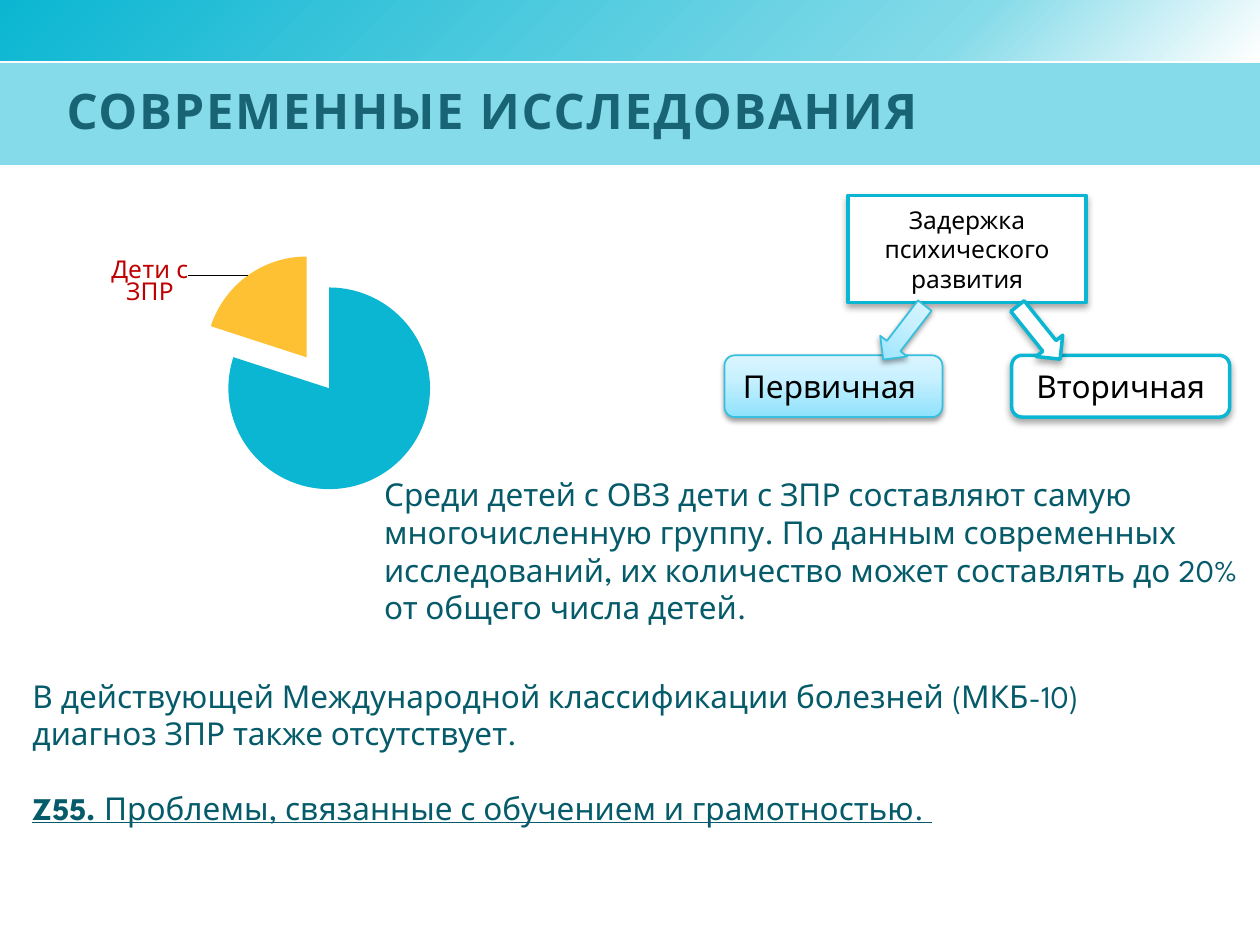
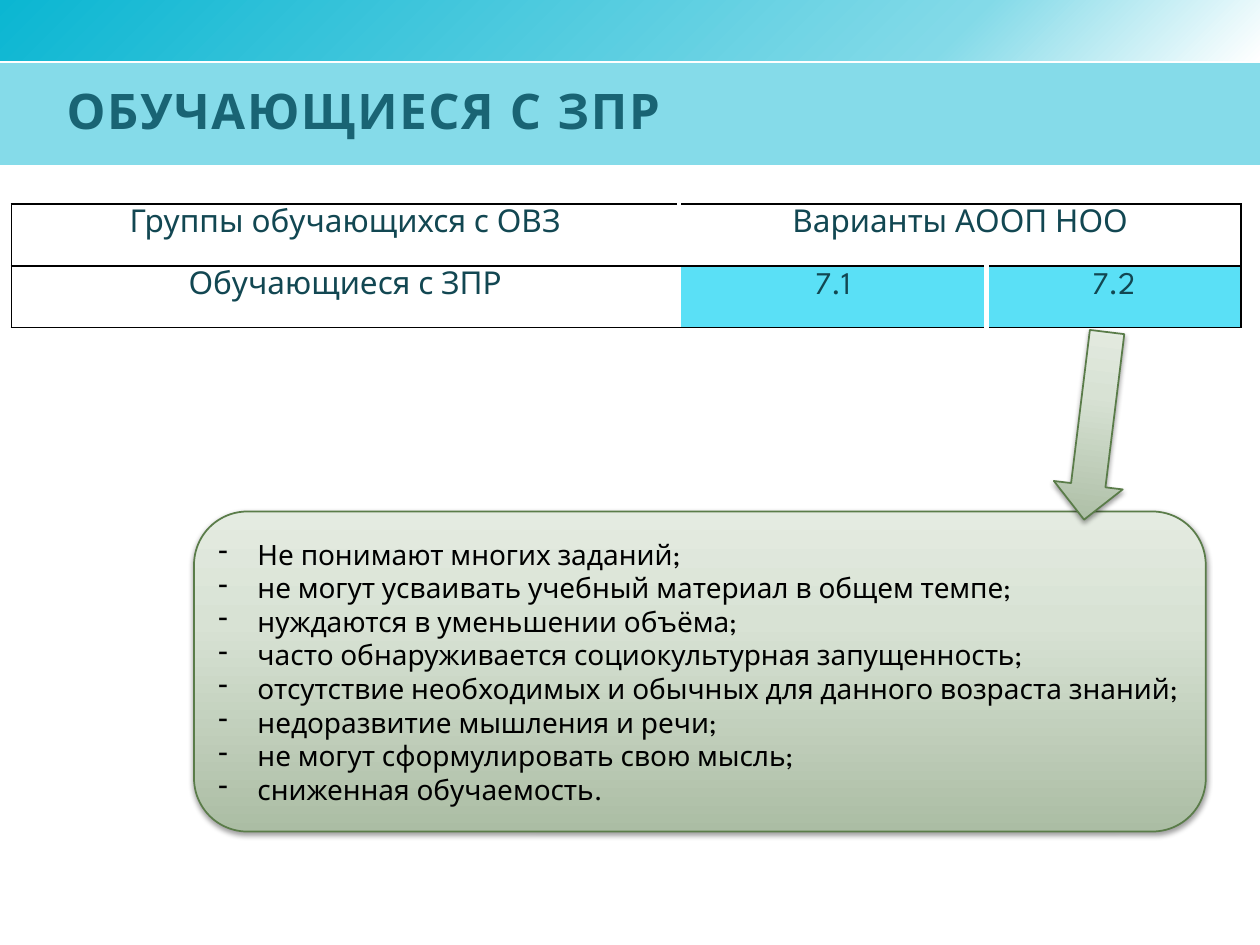
from dataclasses import dataclass
from typing import NamedTuple

from lxml.etree import SubElement
from pptx import Presentation
from pptx.chart.data import CategoryChartData
from pptx.dml.color import RGBColor
from pptx.enum.chart import XL_CHART_TYPE, XL_LABEL_POSITION
from pptx.enum.shapes import MSO_SHAPE
from pptx.enum.text import MSO_ANCHOR, MSO_AUTO_SIZE, PP_ALIGN
from pptx.oxml.ns import qn
from pptx.util import Emu, Pt

PX = 9144  # EMU per px, 100 px to the inch


@dataclass(frozen=True)
class Theme:
    font: str = "League Spartan"
    title: str = "196474"
    body: str = "055B69"
    table: str = "124752"
    black: str = "000000"
    white: str = "FFFFFF"
    accent: str = "0BB6D2"
    band: str = "85DBE9"
    yellow: str = "FEC133"
    label: str = "C00000"
    variant: str = "5AE0F6"
    title_pt: int = 28
    body_pt: int = 18
    list_pt: int = 16
    small_pt: int = 14


T = Theme()


class Box(NamedTuple):
    x: int
    y: int
    w: int
    h: int

    def emu(self) -> list[Emu]:
        return [Emu(v * PX) for v in self]


class Gradient(NamedTuple):
    stops: tuple[tuple[int, str], ...]
    angle: int


class Shadow(NamedTuple):
    alpha: int
    blur: float
    dist: float


class Look(NamedTuple):
    fill: str | Gradient
    line: str | None = None
    weight: float = 0
    shadow: Shadow | None = None


class Block(NamedTuple):
    box: Box
    look: Look
    kind: MSO_SHAPE
    text: str = ""
    size: int = T.body_pt
    rotation: float = 0


class Run(NamedTuple):
    text: str
    bold: bool = False
    underline: bool = False


STRIP = Look(Gradient(((0, T.accent), (75, "83DAE8"), (100, T.white)), 45))
BAND = Look(T.band)
OUTLINED = Look(T.white, T.accent, 2, Shadow(35, 4, 2))
SOFT = Shadow(38, 3.1, 1.6)
BLUE = Look(Gradient(((0, "8FE2FD"), (65, "CAF1FF"), (100, "DAF5FF")), 270), "36BFDE", 1, SOFT)
GREEN = Look(Gradient(((0, "ABBDA4"), (65, "D8E2D4"), (100, "E4EBE1")), 270), "5A7C49", 1, SOFT)


def rgb(color: str) -> RGBColor:
    return RGBColor.from_string(color)


def add(parent, tag: str, **attrs):
    return SubElement(parent, qn(tag), {k: str(v) for k, v in attrs.items()})


def add_run(p, text: str, size: int, color: str, bold: bool = False, underline: bool = False):
    r = p.add_run()
    r.text = text
    f = r.font
    f.name, f.size, f.bold, f.color.rgb = T.font, Pt(size), bold, rgb(color)
    if underline:
        f.underline = True
    return r


def set_gradient(sp, gradient: Gradient) -> None:
    sp.fill.solid()
    sp_pr = sp._element.spPr
    solid = sp_pr.find(qn("a:solidFill"))
    grad = add(sp_pr, "a:gradFill", rotWithShape=1)
    stops = add(grad, "a:gsLst")
    for pos, color in gradient.stops:
        add(add(stops, "a:gs", pos=pos * 1000), "a:srgbClr", val=color)
    add(grad, "a:lin", ang=gradient.angle * 60000, scaled=0)
    sp_pr.replace(solid, grad)


def inset_frame(sp):
    """Wrap and centre the shape's text vertically, with narrow insets."""
    tf = sp.text_frame
    tf.word_wrap = True
    tf.vertical_anchor = MSO_ANCHOR.MIDDLE
    tf.margin_left = tf.margin_right = tf.margin_top = tf.margin_bottom = Emu(7 * PX)
    return tf


def add_block(s, block: Block):
    look = block.look
    sp = s.shapes.add_shape(block.kind, *block.box.emu())
    sp.rotation = block.rotation
    if isinstance(look.fill, Gradient):
        set_gradient(sp, look.fill)
    else:
        sp.fill.solid()
        sp.fill.fore_color.rgb = rgb(look.fill)
    if look.line:
        sp.line.color.rgb = rgb(look.line)
        sp.line.width = Pt(look.weight)
    else:
        sp.line.fill.background()
    sp.shadow.inherit = False
    if look.shadow:
        effects = sp._element.spPr.find(qn("a:effectLst"))
        outer = add(effects, "a:outerShdw", blurRad=Pt(look.shadow.blur), dist=Pt(look.shadow.dist),
                    dir=90 * 60000, rotWithShape=0)
        add(add(outer, "a:srgbClr", val=T.black), "a:alpha", val=look.shadow.alpha * 1000)
    if block.text:
        p = inset_frame(sp).paragraphs[0]
        p.alignment = PP_ALIGN.CENTER
        add_run(p, block.text, block.size, T.black)
    return sp


def add_text(s, box: Box, paragraphs: list[list[Run]], gap: int = 0) -> None:
    tf = s.shapes.add_textbox(*box.emu()).text_frame
    tf.word_wrap = True
    tf.auto_size = MSO_AUTO_SIZE.SHAPE_TO_FIT_TEXT
    for i, runs in enumerate(paragraphs):
        p = tf.add_paragraph() if i else tf.paragraphs[0]
        if i:
            p.space_before = Pt(gap)
        for run in runs:
            add_run(p, run.text, T.body_pt, T.body, run.bold, run.underline)


def add_titled_slide(prs, title: str):
    s = prs.slides.add_slide(prs.slide_layouts[6])
    add_block(s, Block(Box(0, 0, 1000, 48), STRIP, MSO_SHAPE.RECTANGLE))
    add_block(s, Block(Box(0, 50, 1000, 81), BAND, MSO_SHAPE.RECTANGLE))
    tf = s.shapes.add_textbox(*Box(43, 52, 909, 79).emu()).text_frame
    tf.word_wrap = True
    tf.vertical_anchor = MSO_ANCHOR.MIDDLE
    p = tf.paragraphs[0]
    p.line_spacing = 0.8
    r = add_run(p, title, T.title_pt, T.title, bold=True)
    r.font._element.set("spc", "100")
    return s


def manual_layout(layout, **places: float | str) -> None:
    manual = add(layout, "c:manualLayout")
    for name, value in places.items():
        add(manual, f"c:{name}", val=value)


def add_share_pie(s) -> None:
    data = CategoryChartData()
    data.categories = ["1", "2"]
    data.add_series("Series 1", (80, 20))
    chart = s.shapes.add_chart(XL_CHART_TYPE.PIE, *Box(16, 155, 435, 261).emu(), data).chart
    chart.has_legend = chart.has_title = False
    chart.font.name, chart.font.size = T.font, Pt(T.body_pt)
    chart.font.color.rgb = rgb(T.table)
    chart.plots[0].vary_by_categories = False

    series = chart.plots[0].series[0]
    for i, color in enumerate((T.accent, T.yellow)):
        fill = series.points[i].format.fill
        fill.solid()
        fill.fore_color.rgb = rgb(color)
    main_slice = series._element.find(qn("c:dPt"))
    main_slice.addprevious(add(series._element, "c:explosion", val=25))
    main_slice.find(qn("c:spPr")).addprevious(add(main_slice, "c:explosion", val=13))

    series.data_labels.show_value = False
    label = series.points[1].data_label
    add_run(label.text_frame.paragraphs[0], "Дети с ЗПР", T.small_pt, T.label)
    label.position = XL_LABEL_POSITION.OUTSIDE_END
    d_lbl = series._element.find(qn("c:dLbls")).find(qn("c:dLbl"))
    layout = add(d_lbl, "c:layout")
    d_lbl.find(qn("c:idx")).addnext(layout)
    manual_layout(layout, x=-0.1, y=0.11)

    area = chart._chartSpace.chart.plotArea
    layout = area.find(qn("c:layout"))
    if layout is None:
        layout = add(area, "c:layout")
        area.insert(0, layout)
    manual_layout(layout, layoutTarget="inner", xMode="edge", yMode="edge",
                  x=0.32, y=0.17, w=0.46, h=0.77)


def set_borders(cell, left: bool, right: bool) -> None:
    """Black 1 pt edges; a side flagged as a divider is white and 3 pt wide."""
    sides = {"L": left, "R": right, "T": False, "B": False}
    tc_pr = cell._tc.get_or_add_tcPr()
    for i, (side, divider) in enumerate(sides.items()):
        ln = add(tc_pr, f"a:ln{side}", w=Pt(3 if divider else 1))
        add(add(ln, "a:solidFill"), "a:srgbClr", val=T.white if divider else T.black)
        tc_pr.insert(i, ln)


def add_variant_table(s) -> None:
    rows = (("Группы обучающихся с ОВЗ", "Варианты АООП НОО", ""),
            ("Обучающиеся с ЗПР", "7.1", "7.2"))
    widths = (530, 244, 202)
    table = s.shapes.add_table(2, 3, *Box(9, 162, sum(widths), 98).emu()).table
    table.first_row = table.horz_banding = False
    for column, width in zip(table.columns, widths):
        column.width = Emu(width * PX)
    table.cell(0, 1).merge(table.cell(0, 2))
    for y, row in enumerate(rows):
        table.rows[y].height = Emu(49 * PX)
        for x, text in enumerate(row):
            cell = table.cell(y, x)
            cell.margin_left = cell.margin_right = cell.margin_bottom = 0
            cell.margin_top = Emu(5 * PX)
            if y and x:
                cell.fill.solid()
                cell.fill.fore_color.rgb = rgb(T.variant)
            else:
                cell.fill.background()
            merged = y == 0 and x > 0
            set_borders(cell, x == 1 or (x == 2 and not merged), x == 0 or (x == 1 and not merged))
            if text:
                p = cell.text_frame.paragraphs[0]
                p.alignment = PP_ALIGN.CENTER
                add_run(p, text, T.body_pt, T.table)


def add_traits(s, traits: list[str]) -> None:
    tf = inset_frame(add_block(s, Block(Box(154, 406, 803, 254), GREEN, MSO_SHAPE.ROUNDED_RECTANGLE)))
    for i, trait in enumerate(traits):
        p = tf.add_paragraph() if i else tf.paragraphs[0]
        p.alignment = PP_ALIGN.LEFT
        p_pr = p._p.get_or_add_pPr()
        p_pr.set("marL", str(31 * PX))
        p_pr.set("indent", str(-31 * PX))
        add(p_pr, "a:buFontTx")
        add(p_pr, "a:buChar", char="-")
        add_run(p, trait, T.list_pt, T.black)


def build_research(prs) -> None:
    s = add_titled_slide(prs, "СОВРЕМЕННЫЕ ИССЛЕДОВАНИЯ")
    rounded, arrow = MSO_SHAPE.ROUNDED_RECTANGLE, MSO_SHAPE.DOWN_ARROW
    for block in (
        Block(Box(673, 155, 189, 85), OUTLINED, MSO_SHAPE.RECTANGLE,
              "Задержка психического развития", T.small_pt),
        Block(Box(575, 282, 173, 49), BLUE, rounded, "Первичная "),
        Block(Box(803, 282, 173, 49), OUTLINED, rounded, "Вторичная"),
        Block(Box(811, 237, 27, 54), OUTLINED, arrow, rotation=321.2),
        Block(Box(704, 237, 27, 54), BLUE, arrow, rotation=37.5),
    ):
        add_block(s, block)
    add_share_pie(s)
    add_text(s, Box(295, 372, 705, 131), [[Run(
        "Среди детей с ОВЗ дети с ЗПР составляют самую многочисленную группу. По данным "
        "современных исследований, их количество может составлять до 20% от общего числа детей.")]])
    add_text(s, Box(16, 532, 850, 131), [
        [Run("В действующей Международной классификации болезней (МКБ-10) "
             "диагноз ЗПР также отсутствует.")],
        [Run("Z55. ", True, True),
         Run("Проблемы, связанные с обучением и грамотностью. ", False, True)],
    ], gap=21)


def build_learners(prs) -> None:
    s = add_titled_slide(prs, "ОБУЧАЮЩИЕСЯ С ЗПР")
    add_variant_table(s)
    add_traits(s, [
        "Не понимают многих заданий;",
        "не могут усваивать учебный материал в общем темпе;",
        "нуждаются в уменьшении объёма;",
        "часто обнаруживается социокультурная запущенность;",
        "отсутствие необходимых и обычных для данного возраста знаний;",
        "недоразвитие мышления и речи;",
        "не могут сформулировать свою мысль;",
        "сниженная обучаемость.",
    ])
    add_block(s, Block(Box(842, 263, 55, 150), GREEN, MSO_SHAPE.DOWN_ARROW, rotation=7))


def main() -> None:
    prs = Presentation()
    prs.slide_width, prs.slide_height = Emu(1000 * PX), Emu(750 * PX)
    build_research(prs)
    build_learners(prs)
    prs.save("out.pptx")


if __name__ == "__main__":
    main()
